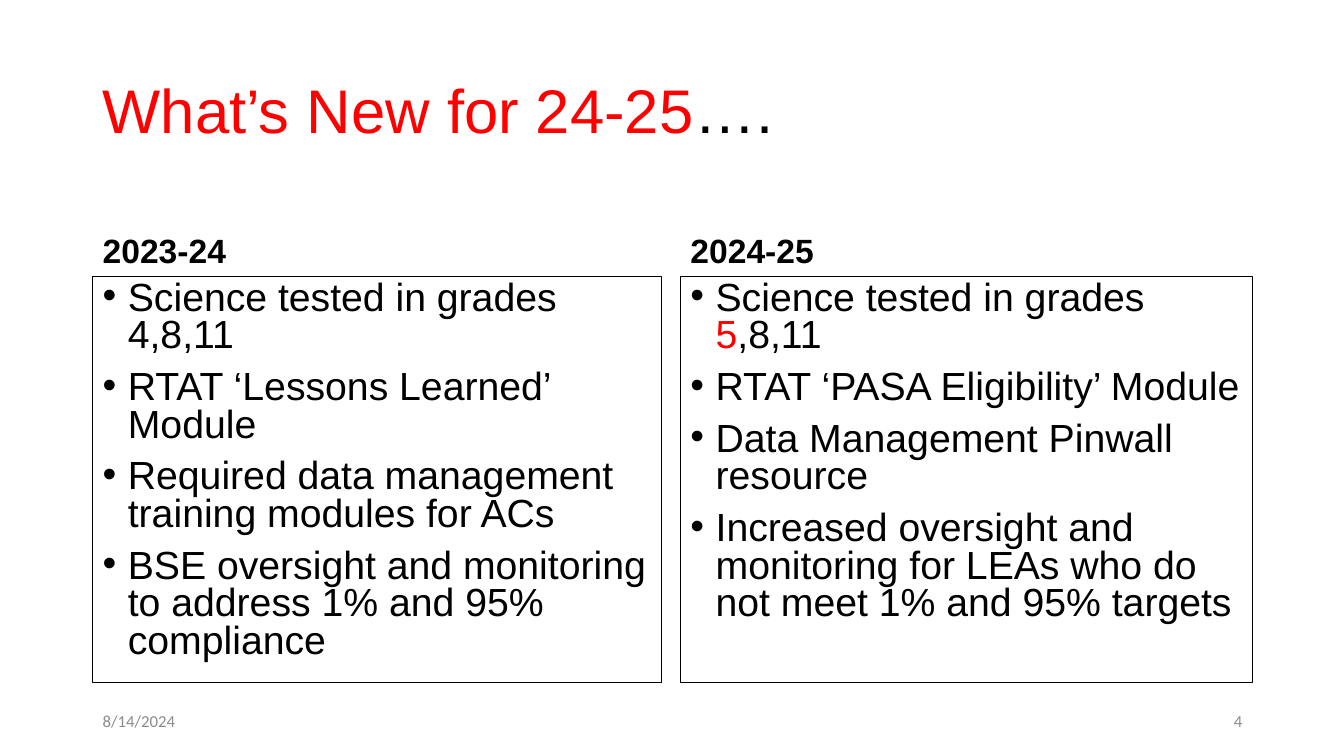
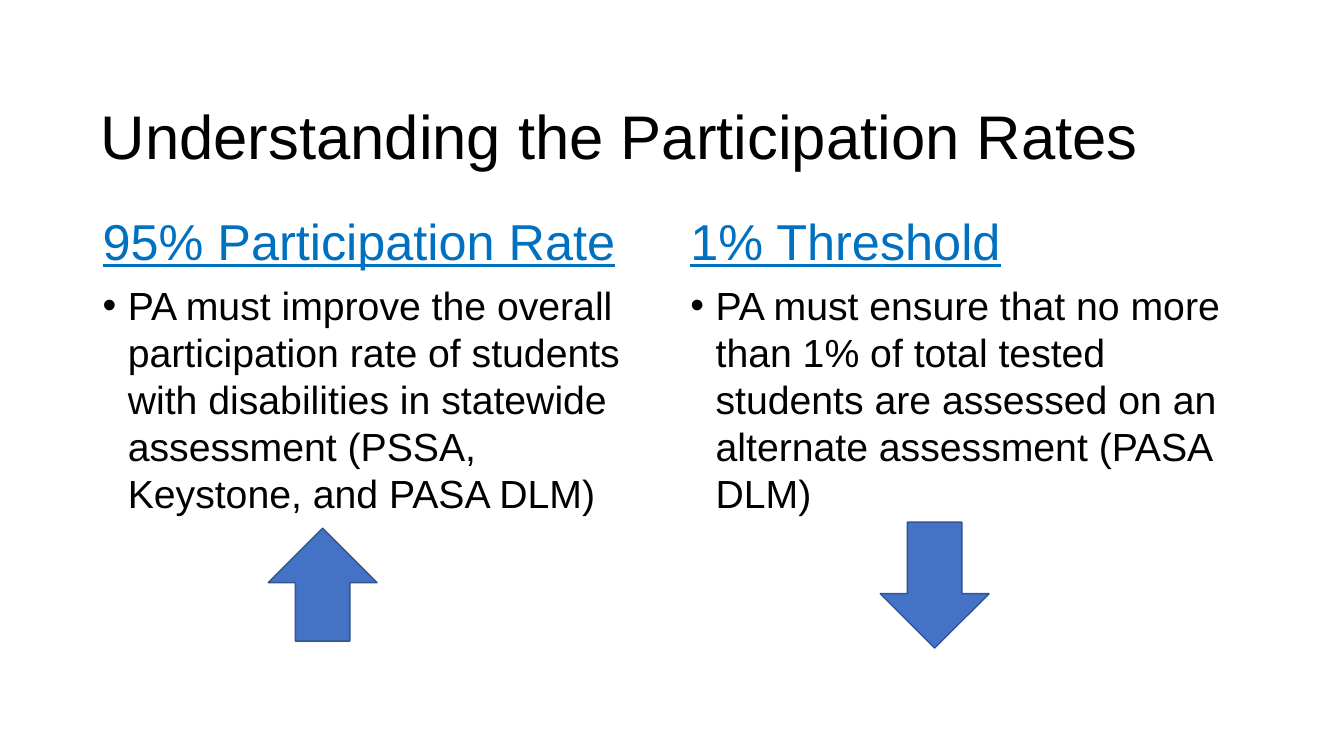
from pptx import Presentation
from pptx.dml.color import RGBColor
from pptx.enum.shapes import MSO_SHAPE
from pptx.enum.text import MSO_ANCHOR, PP_ALIGN
from pptx.oxml.ns import qn
from pptx.util import Inches, Pt
from lxml import etree

BLACK, RED, BLUE, GRAY = "000000", "FF0000", "0070C0", "8C8C8C"
ARROW_FILL, ARROW_LINE = "4472C4", "325491"
RECT, UP, DOWN = MSO_SHAPE.RECTANGLE, MSO_SHAPE.UP_ARROW, MSO_SHAPE.DOWN_ARROW
TOP, MIDDLE, BOTTOM = MSO_ANCHOR.TOP, MSO_ANCHOR.MIDDLE, MSO_ANCHOR.BOTTOM
LEFT, RIGHT = PP_ALIGN.LEFT, PP_ALIGN.RIGHT

MARGIN, CONTENT_W = 0.92, 11.5
COLUMNS = ((MARGIN, 5.64), (6.75, 5.67))
HEAD_Y, HEAD_H, BODY_H = 1.84, 0.9, 4.03


def rgb(value):
    return RGBColor.from_string(value)


def add_bullet(p):
    pPr = p._p.get_or_add_pPr()
    pPr.set("marL", str(Inches(0.25)))
    pPr.set("indent", str(-Inches(0.25)))
    etree.SubElement(pPr, qn("a:buFont")).set("typeface", "Arial")
    etree.SubElement(pPr, qn("a:buChar")).set("char", "•")


def add_text(slide, box, paragraphs, size=28, font="Arial", color=BLACK, bold=False,
             underline=False, align=LEFT, anchor=TOP, spacing=1.0, bullets=False, border=False):
    """Each paragraph is a string or a list of (text, colour) runs."""
    box = [Inches(v) for v in box]
    if border:
        sp = slide.shapes.add_shape(RECT, *box)
        sp.shadow.inherit = False
        sp.fill.background()
        sp.line.color.rgb = rgb(BLACK)
        sp.line.width = Pt(0.75)
    else:
        sp = slide.shapes.add_textbox(*box)
    tf = sp.text_frame
    tf.word_wrap = True
    tf.vertical_anchor = anchor
    for i, runs in enumerate(paragraphs):
        p = tf.add_paragraph() if i else tf.paragraphs[0]
        if bullets:
            add_bullet(p)
        p.alignment = align
        p.line_spacing = spacing
        if i:
            p.space_before = Pt(10)
        for text, run_color in [(runs, color)] if isinstance(runs, str) else runs:
            r = p.add_run()
            r.text = text
            r.font.name = font
            r.font.size = Pt(size)
            r.font.bold = bold
            r.font.underline = underline
            r.font.color.rgb = rgb(run_color)


def add_title(slide, runs, x=MARGIN, y=0.4):
    add_text(slide, (x, y, CONTENT_W, 1.45), [runs], size=44, anchor=MIDDLE, spacing=0.9)


def add_column(slide, column, heading, items, heading_format, **body_format):
    x, w = column
    add_text(slide, (x, HEAD_Y, w, HEAD_H), [heading], anchor=BOTTOM, spacing=0.9,
             **heading_format)
    add_text(slide, (x, HEAD_Y + HEAD_H, w, BODY_H), items, bullets=True, **body_format)


def add_footer(slide, date, number):
    w = 3
    for x, text, align in ((MARGIN, date, LEFT), (MARGIN + CONTENT_W - w, number, RIGHT)):
        add_text(slide, (x, 6.95, w, 0.4), [text], size=12, font="Calibri", color=GRAY,
                 align=align, anchor=MIDDLE)


def add_arrow(slide, kind, box):
    sp = slide.shapes.add_shape(kind, *[Inches(v) for v in box])
    sp.shadow.inherit = False
    sp.fill.solid()
    sp.fill.fore_color.rgb = rgb(ARROW_FILL)
    sp.line.color.rgb = rgb(ARROW_LINE)
    sp.line.width = Pt(1)


def whats_new_slide(slide):
    add_title(slide, [("What’s New for 24-25", RED), ("….", BLACK)])
    years = (
        ("2023-24", ["Science tested in grades 4,8,11",
                     "RTAT ‘Lessons Learned’ Module",
                     "Required data management training modules for ACs",
                     "BSE oversight and monitoring to address 1% and 95% compliance"]),
        ("2024-25", [[("Science tested in grades ", BLACK), ("5", RED), (",8,11", BLACK)],
                     "RTAT ‘PASA Eligibility’ Module",
                     "Data Management Pinwall resource",
                     "Increased oversight and monitoring for LEAs who do not meet "
                     "1% and 95% targets"]),
    )
    for column, (year, items) in zip(COLUMNS, years):
        add_column(slide, column, year, items, dict(size=24, bold=True),
                   spacing=0.8, border=True)
    add_footer(slide, "8/14/2024", "4")


def participation_slide(slide):
    add_title(slide, "Understanding the Participation Rates", x=0.9, y=0.66)
    rates = (
        ("95% Participation Rate",
         "PA must improve the overall participation rate of students with disabilities "
         "in statewide assessment (PSSA, Keystone, and PASA DLM)",
         UP, (2.66, 5.24, 1.08, 1.12)),
        ("1% Threshold",
         "PA must ensure that no more than 1% of total tested students are assessed "
         "on an alternate assessment (PASA DLM)",
         DOWN, (8.73, 5.18, 1.08, 1.25)),
    )
    for column, (heading, text, arrow, arrow_box) in zip(COLUMNS, rates):
        add_column(slide, column, heading, [text],
                   dict(size=36, color=BLUE, underline=True))
        add_arrow(slide, arrow, arrow_box)


def main():
    prs = Presentation()
    prs.slide_width, prs.slide_height = Inches(13.33), Inches(7.5)
    for build in (whats_new_slide, participation_slide):
        build(prs.slides.add_slide(prs.slide_layouts[6]))
    prs.save("out.pptx")


if __name__ == "__main__":
    main()
